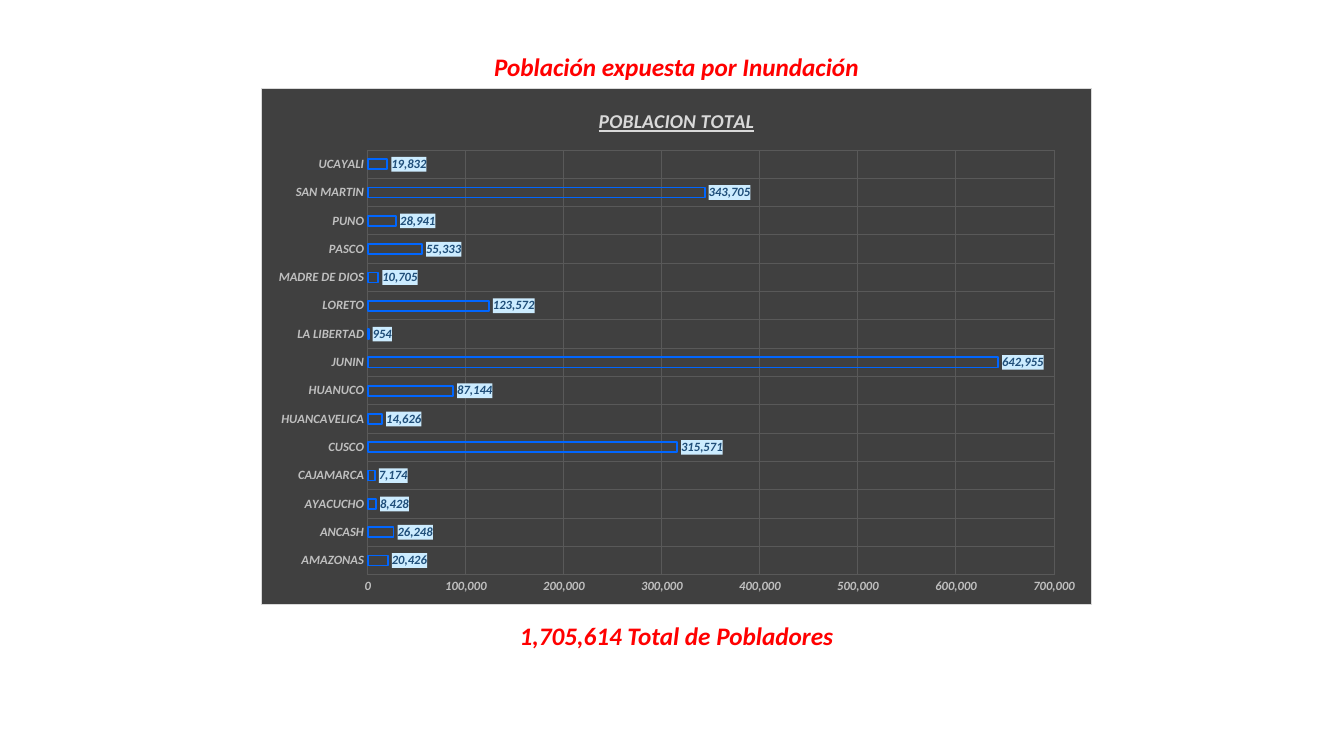
from lxml import etree
from pptx import Presentation
from pptx.chart.data import CategoryChartData
from pptx.dml.color import RGBColor
from pptx.enum.chart import XL_CHART_TYPE, XL_LABEL_POSITION, XL_TICK_MARK
from pptx.enum.text import MSO_ANCHOR, MSO_AUTO_SIZE, PP_ALIGN
from pptx.oxml import parse_xml
from pptx.util import Inches, Pt

BAR = XL_CHART_TYPE.BAR_CLUSTERED
OUTSIDE_END = XL_LABEL_POSITION.OUTSIDE_END
NO_TICK = XL_TICK_MARK.NONE
CENTER = PP_ALIGN.CENTER
TOP = MSO_ANCHOR.TOP
NO_AUTOFIT = MSO_AUTO_SIZE.NONE

FONT = "Calibri"
COLORS = {
    "heading": "FF0000", "panel": "404040", "border": "D9D9D9",
    "chart_title": "D9D9D9", "axis": "BFBFBF", "grid": "595959",
    "bar": "0066FF", "label": "1F4E79", "label_fill": "CCECFF",
}
POPULATION = {
    "AMAZONAS": 20426, "ANCASH": 26248, "AYACUCHO": 8428, "CAJAMARCA": 7174,
    "CUSCO": 315571, "HUANCAVELICA": 14626, "HUANUCO": 87144, "JUNIN": 642955,
    "LA LIBERTAD": 954, "LORETO": 123572, "MADRE DE DIOS": 10705,
    "PASCO": 55333, "PUNO": 28941, "SAN MARTIN": 343705, "UCAYALI": 19832,
}
PLOT_BOX = {"x": 0.128, "y": 0.12, "w": 0.827, "h": 0.823}
NS = ('xmlns:c="http://schemas.openxmlformats.org/drawingml/2006/chart" '
      'xmlns:a="http://schemas.openxmlformats.org/drawingml/2006/main"')


def rgb(name):
    return RGBColor.from_string(COLORS[name])


def style_font(font, size, color, **extra):
    values = {"name": FONT, "size": Pt(size), "bold": True, "italic": True, **extra}
    for key, value in values.items():
        setattr(font, key, value)
    font.color.rgb = rgb(color)


def style_line(line, color, width):
    line.color.rgb = rgb(color)
    line.width = Pt(width)


def solid_fill(name):
    return f'<a:solidFill><a:srgbClr val="{COLORS[name]}"/></a:solidFill>'


def add_heading(shape, text, box):
    shape.left, shape.top, shape.width, shape.height = map(Inches, box)
    tf = shape.text_frame
    values = {"word_wrap": False, "auto_size": NO_AUTOFIT, "vertical_anchor": TOP}
    for key, value in values.items():
        setattr(tf, key, value)
    p = tf.paragraphs[0]
    p.alignment = CENTER
    r = p.add_run()
    r.text = text
    style_font(r.font, 18, "heading")


def style_axis(axis):
    axis.major_tick_mark = axis.minor_tick_mark = NO_TICK
    axis.format.line.fill.background()
    axis.has_major_gridlines = True
    style_line(axis.major_gridlines.format.line, "grid", 0.75)
    style_font(axis.tick_labels.font, 9, "axis")


def style_labels(plot):
    plot.has_data_labels = True
    labels = plot.data_labels
    values = {"show_value": True, "position": OUTSIDE_END,
              "number_format": "#,##0", "number_format_is_linked": False}
    for key, value in values.items():
        setattr(labels, key, value)
    style_font(labels.font, 9, "label")
    fill = parse_xml(f'<c:spPr {NS}>{solid_fill("label_fill")}</c:spPr>')
    labels._element.find("{*}numFmt").addnext(fill)


def style_panel(chart):
    """Fill the chart area and fix the inner plot area."""
    space = chart._chartSpace
    panel = parse_xml(f'<c:spPr {NS}>{solid_fill("panel")}'
                      f'<a:ln w="{Pt(0.75)}">{solid_fill("border")}</a:ln></c:spPr>')
    space.find("{*}chart").addnext(panel)
    area = space.find(".//{*}plotArea")
    for old in area.findall("{*}layout"):
        area.remove(old)
    layout = parse_xml(f'<c:layout {NS}><c:manualLayout/></c:layout>')
    manual = layout[0]
    tag = manual.tag.replace("manualLayout", "")
    settings = {"layoutTarget": "inner", "xMode": "edge", "yMode": "edge", **PLOT_BOX}
    for key, value in settings.items():
        etree.SubElement(manual, tag + key).set("val", str(value))
    area.insert(0, layout)


def add_population_chart(s, box):
    data = CategoryChartData(number_format="#,##0")
    data.categories = list(POPULATION)
    data.add_series("POBLACION TOTAL", list(POPULATION.values()))
    chart = s.shapes.add_chart(BAR, *map(Inches, box), data).chart
    chart.font.name, chart.font.size = FONT, Pt(10)
    chart.has_legend = False
    chart.has_title = True
    p = chart.chart_title.text_frame.paragraphs[0]
    r = p.add_run()
    r.text = "POBLACION TOTAL"
    style_font(r.font, 14, "chart_title", underline=True)

    plot = chart.plots[0]
    plot.gap_width, plot.overlap, plot.vary_by_categories = 182, -50, False
    bars = plot.series[0]
    bars.invert_if_negative = False
    bars.format.fill.background()
    style_line(bars.format.line, "bar", 1.25)
    style_labels(plot)

    style_axis(chart.category_axis)
    axis = chart.value_axis
    style_axis(axis)
    axis.minimum_scale, axis.maximum_scale, axis.major_unit = 0, 700000, 100000
    axis.tick_labels.number_format = "#,##0"
    axis.tick_labels.number_format_is_linked = False
    style_panel(chart)


def build_flood_slide(prs):
    s = prs.slides.add_slide(prs.slide_layouts[5])
    add_heading(s.shapes.title, "Población expuesta por Inundación", (4.78, 0.46, 3.86, 0.4))
    box = (5.03, 6.1, 3.36, 0.4)
    total = s.shapes.add_textbox(*map(Inches, box))
    add_heading(total, "1,705,614 Total de Pobladores", box)
    add_population_chart(s, (2.59, 0.87, 8.24, 5.13))


def main():
    prs = Presentation()
    prs.slide_width, prs.slide_height = Inches(13.33), Inches(7.5)
    build_flood_slide(prs)
    prs.save("out.pptx")


if __name__ == "__main__":
    main()
